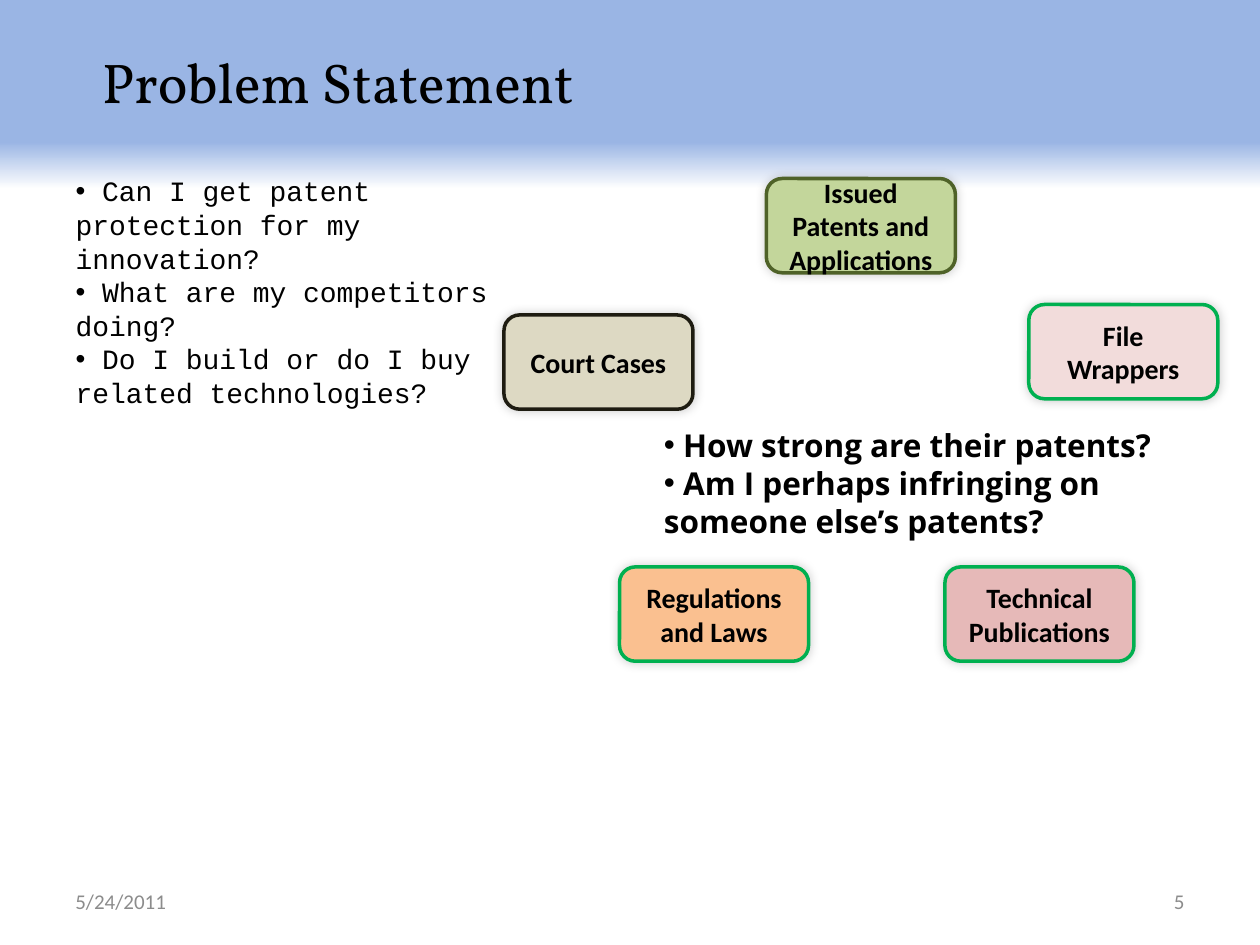
"""Build the Problem Statement slide with questions and patent information sources."""
from lxml.etree import SubElement
from pptx import Presentation
from pptx.dml.color import RGBColor
from pptx.enum.shapes import MSO_SHAPE
from pptx.enum.text import MSO_ANCHOR, MSO_AUTO_SIZE, PP_ALIGN
from pptx.oxml.ns import qn
from pptx.util import Cm, Pt

BLACK = RGBColor(0x00, 0x00, 0x00)
WHITE = RGBColor(0xFF, 0xFF, 0xFF)
GRAY = RGBColor(0x8C, 0x8C, 0x8C)
SKY = RGBColor(0x9A, 0xB5, 0xE4)
LIME = RGBColor(0xC3, 0xD6, 0x9B)
OLIVE = RGBColor(0x4F, 0x62, 0x28)
TAN = RGBColor(0xDD, 0xD9, 0xC3)
DARK_BROWN = RGBColor(0x1E, 0x1C, 0x11)
PALE_PINK = RGBColor(0xF2, 0xDC, 0xDB)
ROSE = RGBColor(0xE6, 0xB9, 0xB8)
ORANGE = RGBColor(0xFA, 0xC0, 0x90)
GREEN = RGBColor(0x00, 0xB0, 0x50)

TITLE = "Problem Statement"
TITLE_BOX = (1.8, 0.84, 10.13, 1.63)
BACKGROUND_STOPS = [(0.15, SKY), (0.2, WHITE)]
QUESTION_LISTS = [
    {
        "box": (1.27, 3.38, 9.95, 3.68),
        "font": ("Courier New", 16, False),
        "items": [
            "Can I get patent protection for my innovation?",
            "What are my competitors doing?",
            "Do I build or do I buy related technologies?",
        ],
    },
    {
        "box": (13.13, 8.46, 10.8, 2.57),
        "font": ("Open Sans", 18, True),
        "items": [
            "How strong are their patents?",
            "Am I perhaps infringing on someone else’s patents?",
        ],
    },
]
SOURCE_SIZE = (3.81, 1.9)
SOURCES = [
    ("Issued Patents and Applications", 15.45, 3.6, LIME, OLIVE),
    ("Court Cases", 10.16, 6.35, TAN, DARK_BROWN),
    ("File Wrappers", 20.74, 6.14, PALE_PINK, GREEN),
    ("Technical Publications", 19.05, 11.43, ROSE, GREEN),
    ("Regulations and Laws", 12.49, 11.43, ORANGE, GREEN),
]
FOOTERS = [
    ("5/24/2011", 1.27, PP_ALIGN.LEFT),
    ("5", 18.21, PP_ALIGN.RIGHT),
]


def place(shape, box):
    shape.left, shape.top, shape.width, shape.height = map(Cm, box)


def format_paragraph(paragraph, name, size, color=BLACK, bold=False, align=PP_ALIGN.LEFT):
    paragraph.alignment = align
    paragraph.space_before = Pt(0)
    font = paragraph.font
    font.name, font.size, font.bold = name, Pt(size), bold
    font.color.rgb = color


def add_bullet(paragraph):
    properties = paragraph._p.get_or_add_pPr()
    properties.set("marL", "0")
    properties.set("indent", "0")
    bullet_font = SubElement(properties, qn("a:buFont"), typeface="Arial")
    bullet_font.addnext(properties.makeelement(qn("a:buChar"), {"char": "•"}))
    default_font = properties.find(qn("a:defRPr"))
    if default_font is not None:
        properties.append(default_font)


def add_soft_shadow(shape):
    shape.shadow.inherit = False
    effects = shape._element.spPr.find(qn("a:effectLst"))
    shadow = SubElement(effects, qn("a:outerShdw"), blurRad=str(Pt(6)), dist="0",
                        dir="18900000", rotWithShape="0")
    color = SubElement(shadow, qn("a:srgbClr"), val=str(BLACK))
    SubElement(color, qn("a:alpha"), val="20000")


def set_background(slide):
    fill = slide.background.fill
    fill.gradient()
    fill.gradient_angle = 270
    for stop, (position, color) in zip(fill.gradient_stops, BACKGROUND_STOPS):
        stop.position = position
        stop.color.rgb = color


def fill_title(title):
    place(title, TITLE_BOX)
    frame = title.text_frame
    frame.text = TITLE
    frame.word_wrap = False
    frame.auto_size = MSO_AUTO_SIZE.NONE
    frame.vertical_anchor = MSO_ANCHOR.TOP
    format_paragraph(frame.paragraphs[0], "Vollkorn", 32)


def fill_questions(body, questions):
    place(body, questions["box"])
    frame = body.text_frame
    frame.text = "\n".join(f" {item}" for item in questions["items"])
    frame.auto_size = MSO_AUTO_SIZE.NONE
    name, size, bold = questions["font"]
    for paragraph in frame.paragraphs:
        format_paragraph(paragraph, name, size, bold=bold)
        add_bullet(paragraph)


def add_source(slide, label, left, top, fill_color, line_color):
    shape = slide.shapes.add_shape(MSO_SHAPE.ROUNDED_RECTANGLE,
                                   *map(Cm, (left, top, *SOURCE_SIZE)))
    shape.fill.solid()
    shape.fill.fore_color.rgb = fill_color
    shape.line.color.rgb = line_color
    shape.line.width = Pt(2)
    add_soft_shadow(shape)
    shape.text_frame.text = label
    shape.text_frame.vertical_anchor = MSO_ANCHOR.MIDDLE
    format_paragraph(shape.text_frame.paragraphs[0], "Calibri", 16, bold=True,
                     align=PP_ALIGN.CENTER)


def add_footer(slide, text, left, align):
    frame = slide.shapes.add_textbox(*map(Cm, (left, 17.65, 5.92, 1.02))).text_frame
    frame.text = text
    frame.word_wrap = True
    frame.vertical_anchor = MSO_ANCHOR.MIDDLE
    format_paragraph(frame.paragraphs[0], "Calibri", 12, GRAY, align=align)


def main():
    presentation = Presentation()
    presentation.slide_width, presentation.slide_height = Cm(25.4), Cm(19.05)
    slide = presentation.slides.add_slide(presentation.slide_layouts.get_by_name("Two Content"))
    set_background(slide)
    title, *bodies = slide.placeholders
    fill_title(title)
    for body, questions in zip(bodies, QUESTION_LISTS):
        fill_questions(body, questions)
    for source in SOURCES:
        add_source(slide, *source)
    for footer in FOOTERS:
        add_footer(slide, *footer)
    presentation.save("out.pptx")


if __name__ == "__main__":
    main()
